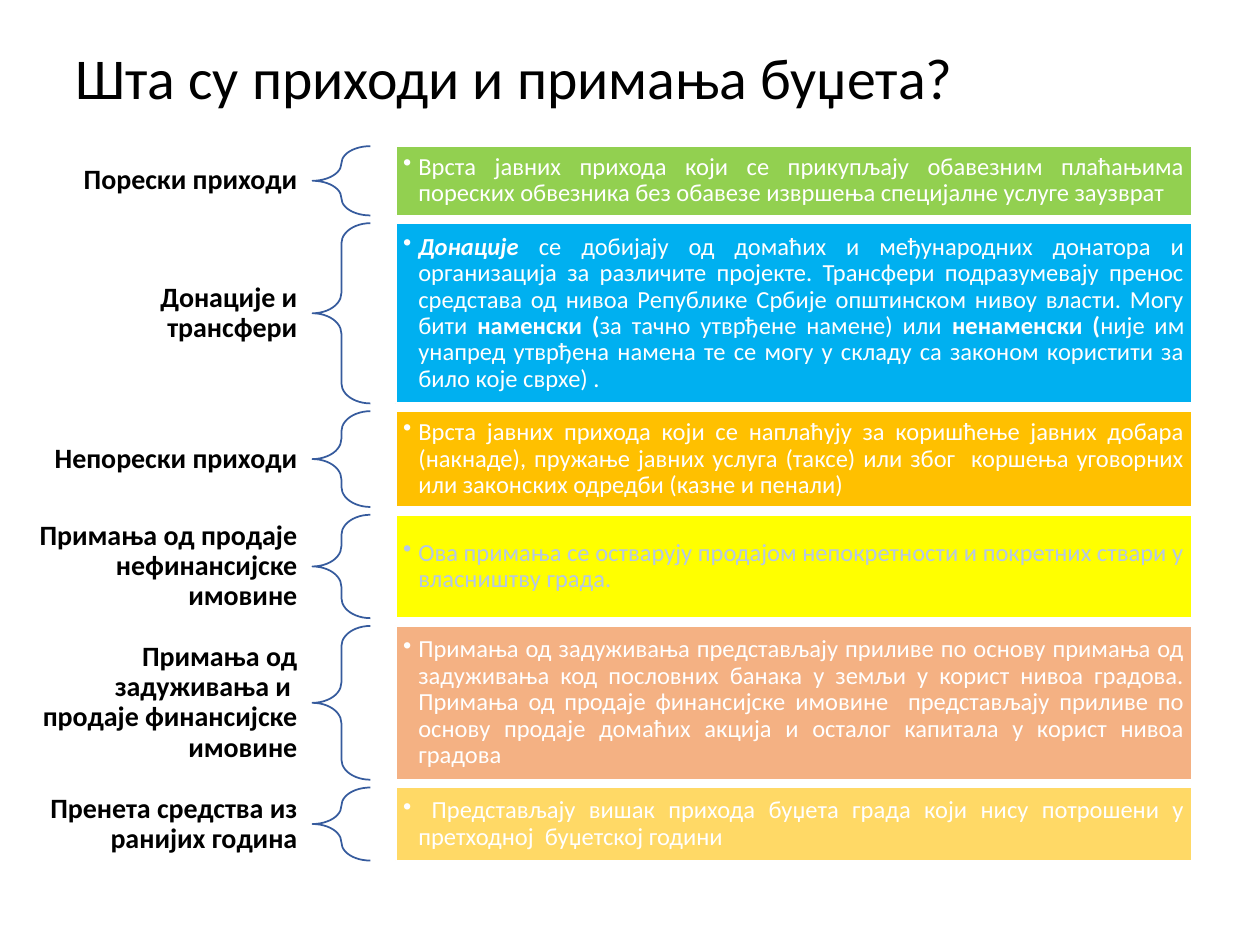
from collections import namedtuple
from dataclasses import dataclass

from lxml.etree import SubElement
from pptx import Presentation
from pptx.dml.color import RGBColor
from pptx.enum.shapes import MSO_SHAPE
from pptx.enum.text import MSO_ANCHOR, PP_ALIGN
from pptx.oxml.ns import qn
from pptx.util import Inches, Pt


@dataclass(frozen=True)
class Theme:
    font: str = "Calibri"
    ink: str = "000000"
    white: str = "FFFFFF"
    pale: str = "B4C7E7"
    brace: str = "365B9D"
    title: int = 33
    label: int = 16
    body: int = 14


THEME = Theme()
WIDE, HIGH = 10, 7.5

# Columns as (left, width), and the span that the rows fill, in inches
LABEL, BRACE, PANEL = (0.16, 2.32), (2.48, 0.46), (3.14, 6.32)
TOP, END = 1.16, 6.83

# A row: height, label, lines in the label, fill, text colour, (text, style) pairs
Row = namedtuple("Row", "high label lines fill ink words")
ROWS = [
    Row(0.55, "Порески приходи", 1, "92D050", THEME.white, [
        ("Врста јавних прихода који се прикупљају обавезним плаћањима пореских "
         "обвезника без обавезе извршења специјалне услуге заузврат", "")]),
    Row(1.43, "Донације и трансфери", 2, "00B0F0", THEME.white, [
        ("Донације ", "bi"),
        ("се добијају од домаћих и међународних донатора и организација за "
         "различите пројекте. Трансфери подразумевају пренос средстава од нивоа "
         "Републике Србије општинском нивоу власти. Могу бити ", ""),
        ("наменски (", "b"),
        ("за тачно утврђене намене) или ", ""),
        ("ненаменски (", "b"),
        ("није им унапред утврђена намена те се могу у складу са законом "
         "користити за било које сврхе) .", "")]),
    Row(0.76, "Непорески приходи", 1, "FFC000", THEME.white, [
        ("Врста јавних прихода који се наплаћују за коришћење јавних добара "
         "(накнаде), пружање јавних услуга (таксе) или због  коршења уговорних "
         "или законских одредби (казне и пенали)", "")]),
    Row(0.82, "Примања од продаје нефинансијске имовине", 3, "FFFF00", THEME.pale, [
        ("Ова примања се остварују продајом непокретности и покретних ствари у "
         "власништву града.", "")]),
    Row(1.22, "Примања од задуживања и  продаје финансијске имовине", 4,
        "F4B183", THEME.white, [
        ("Примања од задуживања представљају приливе по основу примања од "
         "задуживања код пословних банака у земљи у корист нивоа градова. "
         "Примања од продаје финансијске имовине  представљају приливе по основу "
         "продаје домаћих акција и осталог капитала у корист нивоа градова", "")]),
    Row(0.58, "Пренета средства из ранијих година", 2, "FFD966", THEME.white, [
        (" Представљају вишак прихода буџета града који нису потрошени у "
         "претходној  буџетској години", "")]),
]


def color(code):
    return RGBColor.from_string(code)


def place(col, top, high):
    left, width = col
    return [Inches(v) for v in (left, top, width, high)]


def set_frame(frame, side, edge):
    frame.word_wrap = True
    frame.vertical_anchor = MSO_ANCHOR.MIDDLE
    frame.margin_left = frame.margin_right = Inches(side)
    frame.margin_top = frame.margin_bottom = Inches(edge)


def set_run(run, size, ink, style=""):
    font = run.font
    font.name, font.size = THEME.font, Pt(size)
    font.color.rgb = color(ink)
    font.bold, font.italic = "b" in style, "i" in style


def add_text(slide, box, text, size, align, style="", side=0.1, edge=0.05):
    frame = slide.shapes.add_textbox(*box).text_frame
    set_frame(frame, side, edge)
    frame.text = text
    para = frame.paragraphs[0]
    para.alignment, para.line_spacing = align, 0.9
    set_run(para.runs[0], size, THEME.ink, style)


def add_brace(slide, box):
    brace = slide.shapes.add_shape(MSO_SHAPE.LEFT_BRACE, *box)
    brace.shadow.inherit = False
    brace.adjustments[0] = 0.35
    brace.fill.background()
    brace.line.color.rgb = color(THEME.brace)
    brace.line.width = Pt(1)


def add_bullet(para, indent):
    props = para._p.get_or_add_pPr()
    props.set("marL", str(Inches(indent)))
    props.set("indent", str(-Inches(indent)))
    SubElement(props, qn("a:buChar")).set("char", "•")


def add_panel(slide, box, row):
    panel = slide.shapes.add_shape(MSO_SHAPE.RECTANGLE, *box)
    panel.shadow.inherit = False
    panel.fill.solid()
    panel.fill.fore_color.rgb = color(row.fill)
    panel.line.color.rgb = color(THEME.white)
    panel.line.width = Pt(1)
    set_frame(panel.text_frame, 0.06, 0.06)
    para = panel.text_frame.paragraphs[0]
    para.alignment, para.line_spacing = PP_ALIGN.JUSTIFY, 0.9
    add_bullet(para, 0.12)
    for text, style in row.words:
        run = para.add_run()
        run.text = text
        set_run(run, THEME.body, row.ink, style)


def add_row(slide, row, top):
    # The label is centred on its row
    tall = 0.11 + 0.24 * row.lines
    box = place(LABEL, top + (row.high - tall) / 2, tall)
    add_text(slide, box, row.label, THEME.label, PP_ALIGN.RIGHT, "b", 0.12, 0.04)
    add_brace(slide, place(BRACE, top, row.high))
    add_panel(slide, place(PANEL, top, row.high), row)


def main():
    deck = Presentation()
    deck.slide_width, deck.slide_height = Inches(WIDE), Inches(HIGH)
    slide = deck.slides.add_slide(deck.slide_layouts[6])

    # Title
    box = place((0.05 * WIDE, 0.9 * WIDE), 0.04 * HIGH, 0.09 * HIGH)
    add_text(slide, box, "Шта су приходи и примања буџета?", THEME.title, PP_ALIGN.LEFT)

    # Rows, with equal gaps between them
    gap = (END - TOP - sum(row.high for row in ROWS)) / (len(ROWS) - 1)
    top = TOP
    for row in ROWS:
        add_row(slide, row, top)
        top += row.high + gap

    deck.save("out.pptx")


if __name__ == "__main__":
    main()
